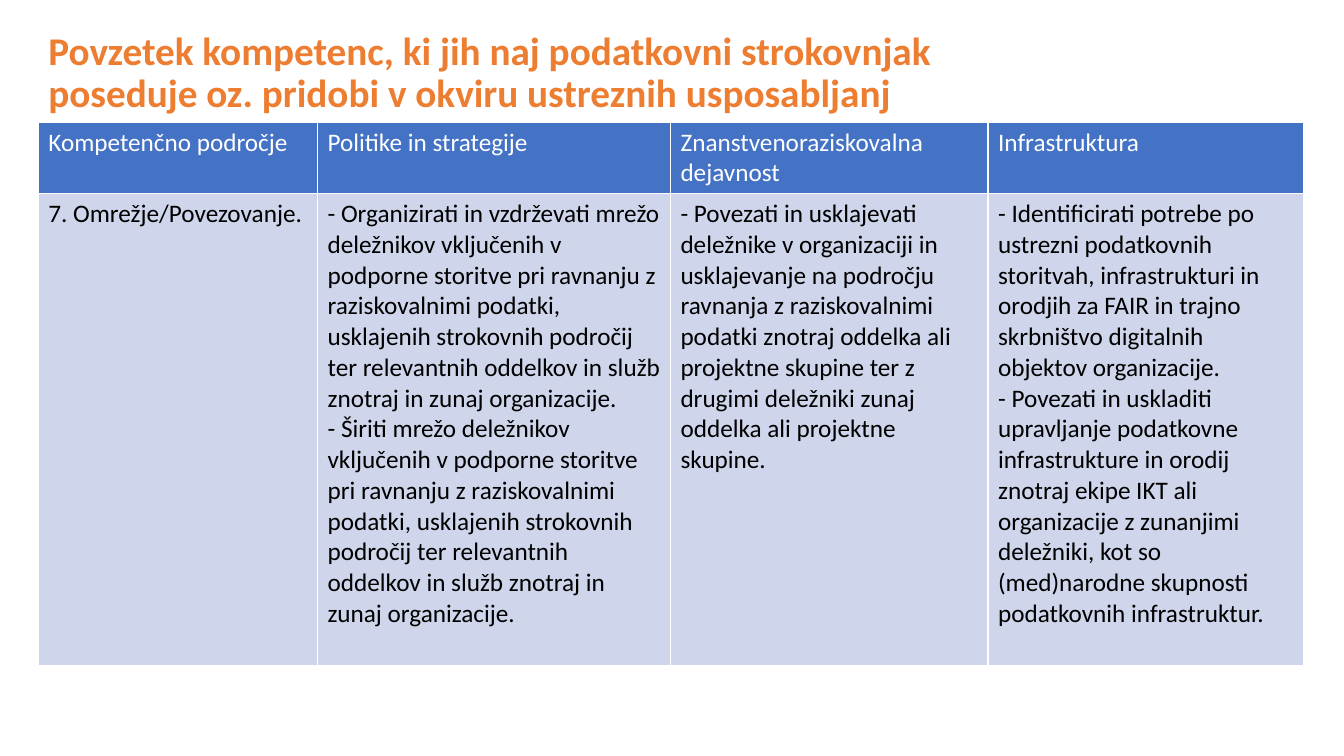
from dataclasses import dataclass

from lxml.etree import SubElement
from pptx import Presentation
from pptx.dml.color import RGBColor
from pptx.enum.text import MSO_ANCHOR, MSO_AUTO_SIZE, PP_ALIGN
from pptx.oxml.ns import qn
from pptx.util import Emu, Pt

PX = 9144
FONT = "Calibri"
COLORS = {
    "title": "ED7D31",
    "header": "4472C4",
    "body": "CFD5EA",
    "light": "FFFFFF",
    "dark": "000000",
}
TITLE_LINES = (
    "Povzetek kompetenc, ki jih naj podatkovni strokovnjak ",
    "poseduje oz. pridobi v okviru ustreznih usposabljanj",
)
HEADER_HEIGHT, BODY_HEIGHT = 70, 468


@dataclass(frozen=True)
class Column:
    width: int
    heading: str
    items: tuple[str, ...]


COLUMNS = (
    Column(277, "Kompetenčno področje", ("7. Omrežje/Povezovanje.",)),
    Column(350, "Politike in strategije", (
        "- Organizirati in vzdrževati mrežo deležnikov vključenih v podporne "
        "storitve pri ravnanju z raziskovalnimi podatki, usklajenih strokovnih "
        "področij ter relevantnih oddelkov in služb znotraj in zunaj organizacije.",
        "- Širiti mrežo deležnikov vključenih v podporne storitve pri ravnanju z "
        "raziskovalnimi podatki, usklajenih strokovnih področij ter relevantnih "
        "oddelkov in služb znotraj in zunaj organizacije.",
    )),
    Column(315, "Znanstvenoraziskovalna dejavnost", (
        "- Povezati in usklajevati deležnike v organizaciji in usklajevanje na "
        "področju ravnanja z raziskovalnimi podatki znotraj oddelka ali projektne "
        "skupine ter z drugimi deležniki zunaj oddelka ali projektne skupine.",
    )),
    Column(313, "Infrastruktura", (
        "- Identificirati potrebe po ustrezni podatkovnih storitvah, infrastrukturi "
        "in orodjih za FAIR in trajno skrbništvo digitalnih objektov organizacije.",
        "- Povezati in uskladiti upravljanje podatkovne infrastrukture in orodij "
        "znotraj ekipe IKT ali organizacije z zunanjimi deležniki, kot so "
        "(med)narodne skupnosti podatkovnih infrastruktur.",
    )),
)


def px(length: int) -> Emu:
    return Emu(length * PX)


def add_span(para, text: str, size: int, color: str, bold: bool = False) -> None:
    span = para.add_run()
    span.text = text
    span.font.name = FONT
    span.font.size = Pt(size)
    span.font.bold = bold
    span.font.color.rgb = RGBColor.from_string(COLORS[color])


def draw_title(page) -> None:
    title = page.shapes.title
    title.left, title.top, title.width, title.height = map(px, (38, 40, 1220, 67))
    frame = title.text_frame
    frame.word_wrap = True
    frame.auto_size = MSO_AUTO_SIZE.NONE
    frame.vertical_anchor = MSO_ANCHOR.MIDDLE
    para = frame.paragraphs[0]
    para.alignment = PP_ALIGN.LEFT
    para.line_spacing = 0.9
    for index, line in enumerate(TITLE_LINES):
        if index:
            para.add_line_break()
        add_span(para, line, 28, "title", True)


def add_borders(cell) -> None:
    properties = cell._tc.get_or_add_tcPr()
    for side in ("a:lnL", "a:lnR", "a:lnT", "a:lnB"):
        line = SubElement(properties, qn(side), w=str(Pt(1)))
        fill = SubElement(line, qn("a:solidFill"))
        SubElement(fill, qn("a:srgbClr"), val=COLORS["light"])


def fill_cell(cell, texts: tuple[str, ...], fill: str, color: str) -> None:
    add_borders(cell)
    cell.fill.solid()
    cell.fill.fore_color.rgb = RGBColor.from_string(COLORS[fill])
    frame = cell.text_frame
    for index, text in enumerate(texts):
        para = frame.add_paragraph() if index else frame.paragraphs[0]
        add_span(para, text, 18, color)


def draw_table(page) -> None:
    width = sum(column.width for column in COLUMNS)
    table = page.shapes.add_table(
        2, len(COLUMNS), px(38), px(121), px(width), px(HEADER_HEIGHT + BODY_HEIGHT)
    ).table
    table.first_row = True
    table.horz_banding = False
    for row, height in zip(table.rows, (HEADER_HEIGHT, BODY_HEIGHT)):
        row.height = px(height)
    for index, column in enumerate(COLUMNS):
        table.columns[index].width = px(column.width)
        fill_cell(table.cell(0, index), (column.heading,), "header", "light")
        fill_cell(table.cell(1, index), column.items, "body", "dark")


def main() -> None:
    deck = Presentation()
    deck.slide_width, deck.slide_height = px(1333), px(750)
    page = deck.slides.add_slide(deck.slide_layouts.get_by_name("Title Only"))
    draw_title(page)
    draw_table(page)
    deck.save("out.pptx")


if __name__ == "__main__":
    main()
